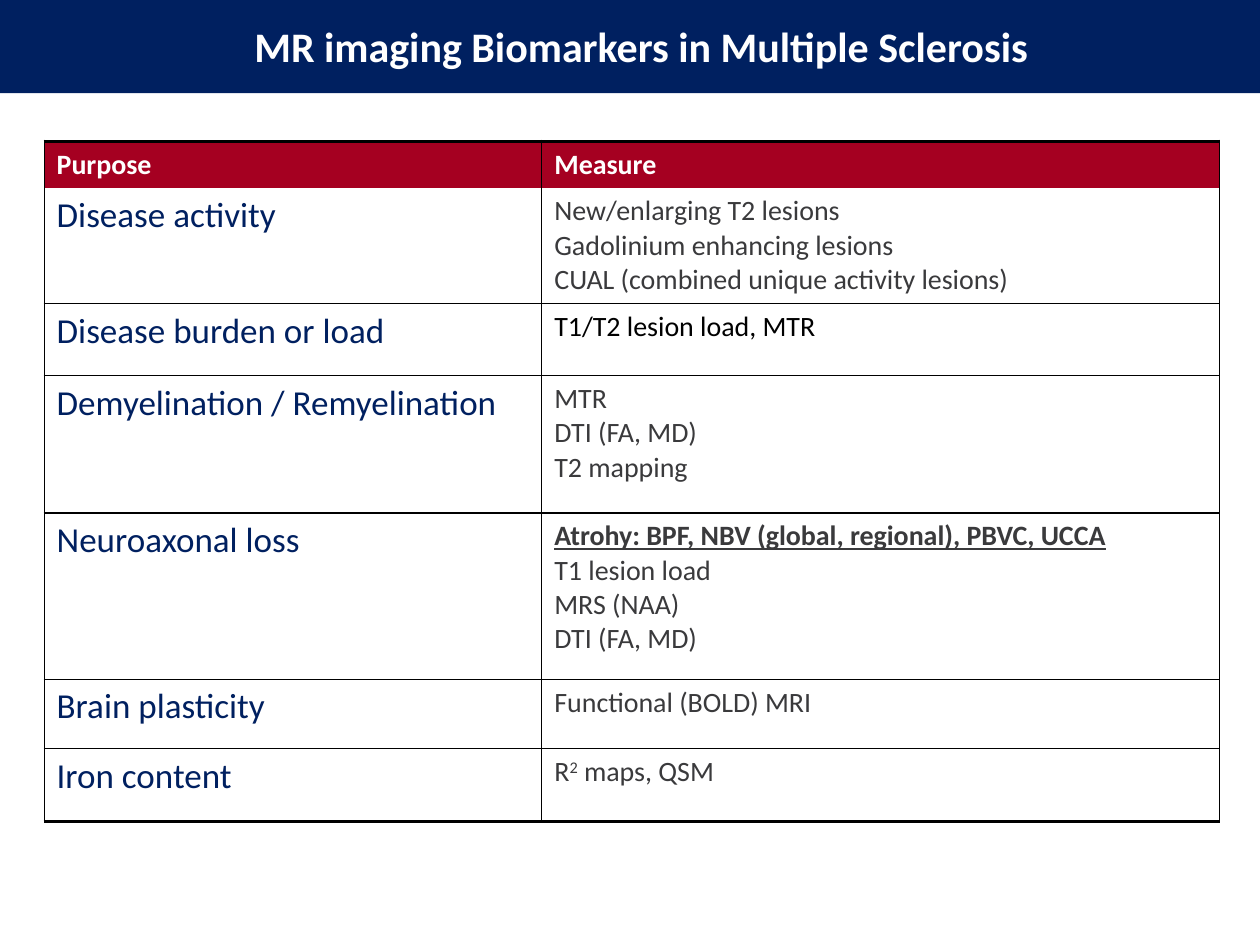
from dataclasses import dataclass

from lxml.etree import SubElement
from pptx import Presentation
from pptx.dml.color import RGBColor as RGB
from pptx.enum.shapes import MSO_SHAPE as Shape
from pptx.enum.text import MSO_ANCHOR as Anchor, PP_ALIGN as Align
from pptx.oxml.ns import qn
from pptx.util import Inches, Pt


@dataclass(frozen=True)
class Theme:
    font: str = "Calibri"
    navy: str = "002060"
    red: str = "A50021"
    gray: str = "3A3A3C"
    black: str = "000000"
    white: str = "FFFFFF"
    title_size: int = 24
    purpose_size: int = 20
    measure_size: int = 16
    thin: float = 0.75
    thick: float = 2


THEME = Theme()

HEADER = ("Purpose", "Measure")
# Purpose, row height, measures
BIOMARKERS = [
    ("Disease activity", 0.92, ["New/enlarging T2 lesions", "Gadolinium enhancing lesions",
                                "CUAL (combined unique activity lesions)"]),
    ("Disease burden or load", 0.57, ["T1/T2 lesion load, MTR"]),
    ("Demyelination / Remyelination", 1.09, ["MTR", "DTI (FA, MD)", "T2 mapping"]),
    ("Neuroaxonal loss", 1.32, ["Atrohy: BPF, NBV (global, regional), PBVC, UCCA",
                                "T1 lesion load", "MRS (NAA)", "DTI (FA, MD)"]),
    ("Brain plasticity", 0.55, ["Functional (BOLD) MRI"]),
    ("Iron content", 0.58, ["R^2^ maps, QSM"]),
]
KEY_MEASURE = BIOMARKERS[3][2][0]
BLACK_MEASURE = BIOMARKERS[1][2][0]


def write(para, text, size, color, bold=False, underline=False, align=Align.LEFT):
    """Fill a paragraph; text between two carets is superscript."""
    para.alignment = align
    for index, part in enumerate(text.split("^")):
        span = para.add_run()
        span.text = part
        font = span.font
        font.name, font.size = THEME.font, Pt(size)
        font.bold, font.underline = bold, underline
        font.color.rgb = RGB.from_string(color)
        if index % 2:
            span._r.get_or_add_rPr().set("baseline", "30000")


def set_borders(cell, **widths):
    """Draw the sides L, R, T and B in points; zero hides a side."""
    properties = cell._tc.get_or_add_tcPr()
    for position, side in enumerate("LRTB"):
        width = widths.get(side, THEME.thin)
        line = SubElement(properties, qn(f"a:ln{side}"), w=str(Pt(width)))
        properties.insert(position, line)
        if width:
            fill = SubElement(line, qn("a:solidFill"))
            SubElement(fill, qn("a:srgbClr"), val=THEME.black)
        else:
            SubElement(line, qn("a:noFill"))


class SlideBuilder:
    def __init__(self, deck, theme):
        self.theme = theme
        self.slide = deck.slides.add_slide(deck.slide_layouts[5])

    def band(self, left, top, width, height):
        """Add a filled strip behind everything else."""
        shapes = self.slide.shapes
        box = shapes.add_shape(Shape.RECTANGLE, Inches(left), Inches(top),
                               Inches(width), Inches(height))
        box.shadow.inherit = False
        box.fill.solid()
        box.fill.fore_color.rgb = RGB.from_string(self.theme.navy)
        box.line.fill.background()
        shapes._spTree.insert(2, box._element)

    def title(self, text, left, top, width, height):
        box = self.slide.shapes.title
        box.left, box.top = Inches(left), Inches(top)
        box.width, box.height = Inches(width), Inches(height)
        box.text_frame.vertical_anchor = Anchor.MIDDLE
        write(box.text_frame.paragraphs[0], text, self.theme.title_size,
              self.theme.white, bold=True, align=Align.CENTER)

    def cell(self, cell, fill, **borders):
        cell.fill.solid()
        cell.fill.fore_color.rgb = RGB.from_string(fill)
        cell.margin_left = cell.margin_right = Inches(0.1)
        cell.margin_top = cell.margin_bottom = Inches(0.05)
        set_borders(cell, **borders)
        return cell.text_frame

    def table(self, left, top, widths, header, rows):
        theme = self.theme
        heights = [0.37] + [height for _, height, _ in rows]
        frame = self.slide.shapes.add_table(len(heights), len(widths), Inches(left), Inches(top),
                                            Inches(sum(widths)), Inches(sum(heights)))
        table = frame.table
        table.first_row = table.horz_banding = False
        for column, width in zip(table.columns, widths):
            column.width = Inches(width)
        for row, height in zip(table.rows, heights):
            row.height = Inches(height)

        for column, label in enumerate(header):
            text_frame = self.cell(table.cell(0, column), theme.red, T=theme.thick, B=0)
            write(text_frame.paragraphs[0], label, theme.measure_size, theme.white, bold=True)

        for index, (purpose, _, measures) in enumerate(rows, start=1):
            borders = {"T": 0 if index == 1 else theme.thin,
                       "B": theme.thick if index == len(rows) else theme.thin}
            purpose_frame, measure_frame = (
                self.cell(table.cell(index, column), theme.white, **borders) for column in (0, 1))
            write(purpose_frame.paragraphs[0], purpose, theme.purpose_size, theme.navy)
            for number, measure in enumerate(measures):
                para = measure_frame.add_paragraph() if number else measure_frame.paragraphs[0]
                is_key = measure == KEY_MEASURE
                color = theme.black if measure == BLACK_MEASURE else theme.gray
                write(para, measure, theme.measure_size, color, bold=is_key,
                      underline=is_key, align=Align.JUSTIFY)


def main():
    deck = Presentation()
    deck.slide_width, deck.slide_height = Inches(10), Inches(7.5)
    page = SlideBuilder(deck, THEME)
    page.band(0, 0, 10, 0.74)
    page.title("MR imaging Biomarkers in Multiple Sclerosis", 0.18, -0.11, 9.82, 0.95)
    page.table(0.35, 1.12, [3.95, 5.38], HEADER, BIOMARKERS)
    deck.save("out.pptx")


if __name__ == "__main__":
    main()
